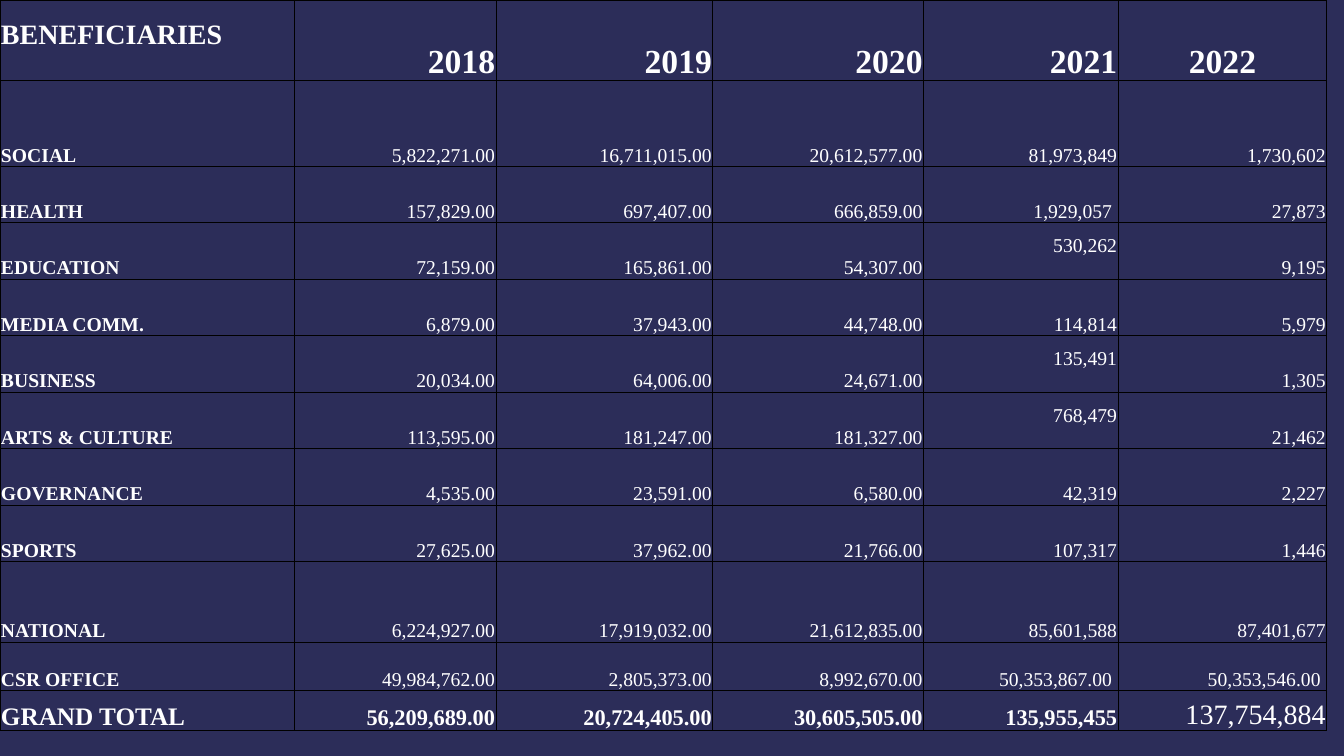
from dataclasses import dataclass

from lxml import etree
from pptx import Presentation
from pptx.dml.color import RGBColor
from pptx.enum.text import MSO_ANCHOR, PP_ALIGN
from pptx.oxml.ns import qn
from pptx.util import Inches, Pt

LEFT, RIGHT, CENTER = PP_ALIGN.LEFT, PP_ALIGN.RIGHT, PP_ALIGN.CENTER
BOTTOM = MSO_ANCHOR.BOTTOM
BLANK = 6


@dataclass(frozen=True)
class Theme:
    font: str = "Times New Roman"
    back: str = "2C2D59"
    ink: str = "FFFFFF"
    rule: str = "000000"
    rule_pt: float = 0.5
    year: int = 24
    head: int = 20
    total: int = 18
    sum: int = 16
    body: int = 14


THEME = Theme()
WIDTHS = [2.92, 2, 2.15, 2.09, 1.93, 2.07]
HEIGHTS = [0.8, 0.85] + [0.56] * 7 + [0.8, 0.48, 0.4]
ROWS = [
    ["BENEFICIARIES", "2018", "2019", "2020", "2021", "2022"],
    ["SOCIAL", "5,822,271.00", "16,711,015.00", "20,612,577.00", "81,973,849", "1,730,602"],
    ["HEALTH", "157,829.00", "697,407.00", "666,859.00", "1,929,057", "27,873"],
    ["EDUCATION", "72,159.00", "165,861.00", "54,307.00", "530,262", "9,195"],
    ["MEDIA COMM.", "6,879.00", "37,943.00", "44,748.00", "114,814", "5,979"],
    ["BUSINESS", "20,034.00", "64,006.00", "24,671.00", "135,491", "1,305"],
    ["ARTS & CULTURE", "113,595.00", "181,247.00", "181,327.00", "768,479", "21,462"],
    ["GOVERNANCE", "4,535.00", "23,591.00", "6,580.00", "42,319", "2,227"],
    ["SPORTS", "27,625.00", "37,962.00", "21,766.00", "107,317", "1,446"],
    ["NATIONAL", "6,224,927.00", "17,919,032.00", "21,612,835.00", "85,601,588", "87,401,677"],
    ["CSR OFFICE", "49,984,762.00", "2,805,373.00", "8,992,670.00", "50,353,867.00", "50,353,546.00"],
    ["GRAND TOTAL", "56,209,689.00", "20,724,405.00", "30,605,505.00", "135,955,455", "137,754,884"],
]
LAST = len(ROWS) - 1

# Cells that differ from their row and column: (row, column) -> format
SPECIAL = {
    (0, 0): {"size": THEME.head, "low": 0.3},
    (0, 5): {"align": CENTER},
    (LAST, 0): {"size": THEME.total},
    (LAST, 5): {"size": THEME.head, "bold": False},
}
SPECIAL.update({(row, 4): {"low": 0.22} for row in (3, 5, 6)})
SPECIAL.update({spot: {"side": 0.06} for spot in ((2, 4), (10, 4), (10, 5))})


def style(row, col):
    """Return the format of one cell from its place in the table."""
    size = {0: THEME.year, LAST: THEME.sum}.get(row, THEME.body)
    base = {
        "size": size,
        "bold": col == 0 or row in (0, LAST),
        "align": RIGHT if col else LEFT,
        "low": 0,
        "side": 0.01,
    }
    return base | SPECIAL.get((row, col), {})


def apply(target, values):
    for name, value in values.items():
        setattr(target, name, value)


class Page:
    def __init__(self, deck, theme):
        self.theme = theme
        self.slide = deck.slides.add_slide(deck.slide_layouts[BLANK])
        fill = self.slide.background.fill
        fill.solid()
        fill.fore_color.rgb = RGBColor.from_string(theme.back)

    def table(self, rows, widths, heights):
        grid = self.slide.shapes.add_table(
            len(rows), len(widths), 0, 0,
            Inches(sum(widths)), Inches(sum(heights))).table
        apply(grid, {"first_row": False, "horz_banding": False})
        for column, width in zip(grid.columns, widths):
            column.width = Inches(width)
        for line, height in zip(grid.rows, heights):
            line.height = Inches(height)
        for row, texts in enumerate(rows):
            for col, text in enumerate(texts):
                self.cell(grid.cell(row, col), text, style(row, col))

    def cell(self, cell, text, form):
        apply(cell, {
            "vertical_anchor": BOTTOM,
            "margin_left": Inches(0.01),
            "margin_right": Inches(form["side"]),
            "margin_top": Inches(0.01),
            "margin_bottom": Inches(form["low"]),
        })
        self.border(cell)
        cell.fill.solid()
        cell.fill.fore_color.rgb = RGBColor.from_string(self.theme.back)
        para = cell.text_frame.paragraphs[0]
        para.alignment = form["align"]
        run = para.add_run()
        run.text = text
        apply(run.font, {
            "name": self.theme.font,
            "size": Pt(form["size"]),
            "bold": form["bold"],
        })
        run.font.color.rgb = RGBColor.from_string(self.theme.ink)

    def border(self, cell):
        props = cell._tc.get_or_add_tcPr()
        for edge in ("a:lnL", "a:lnR", "a:lnT", "a:lnB"):
            line = etree.SubElement(props, qn(edge), w=str(Pt(self.theme.rule_pt)))
            fill = etree.SubElement(line, qn("a:solidFill"))
            etree.SubElement(fill, qn("a:srgbClr"), val=self.theme.rule)


def main():
    deck = Presentation()
    apply(deck, {"slide_width": Inches(13.33), "slide_height": Inches(7.5)})
    Page(deck, THEME).table(ROWS, WIDTHS, HEIGHTS)
    deck.save("out.pptx")


if __name__ == "__main__":
    main()
